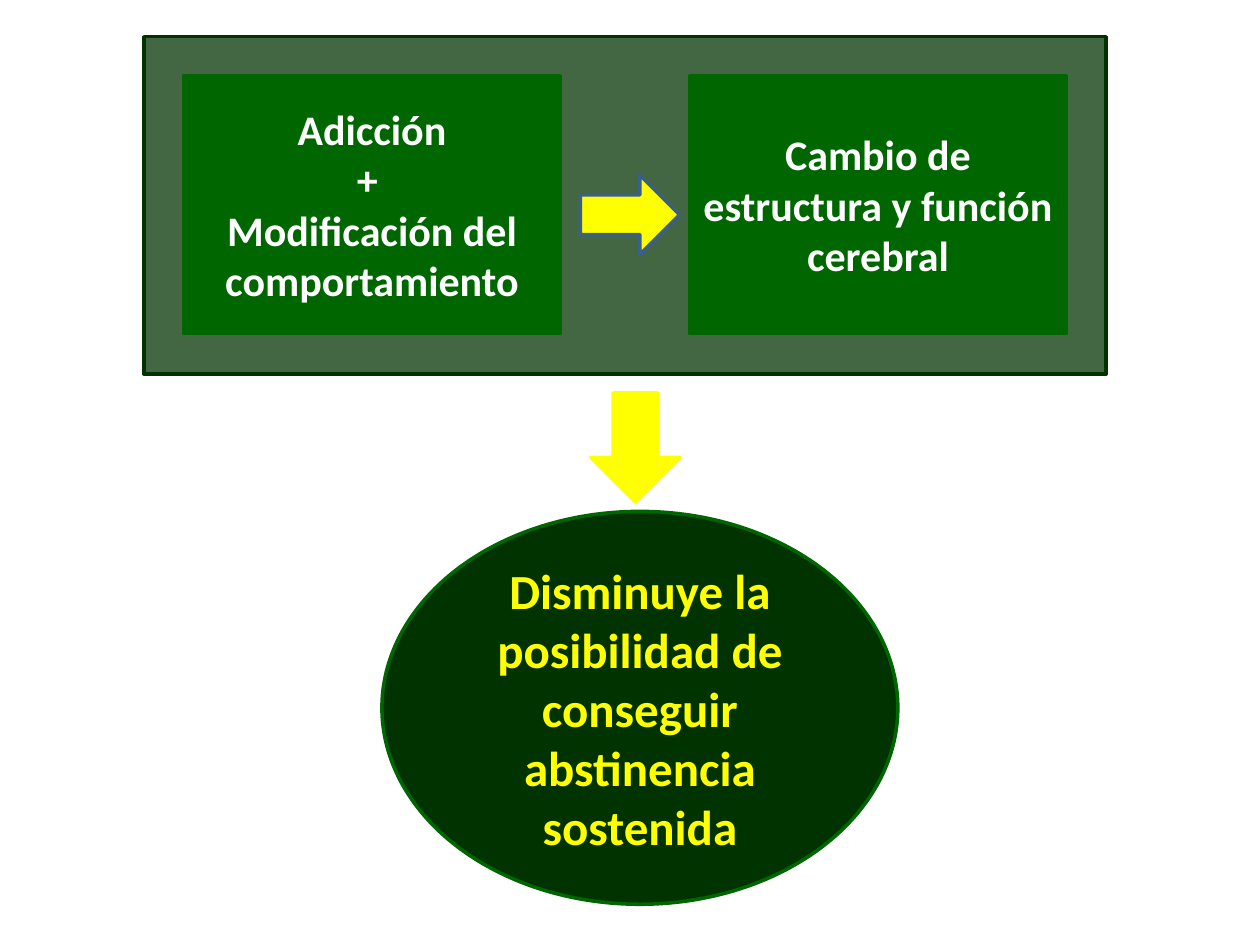
import dataclasses

import lxml.etree
import pptx
import pptx.dml.color
import pptx.enum.shapes
import pptx.enum.text
import pptx.oxml.ns
import pptx.util

Cm = pptx.util.Cm
Kind = pptx.enum.shapes.MSO_SHAPE


@dataclasses.dataclass(frozen=True)
class Theme:
    font: str = "Calibri"
    dark: str = "003300"
    green: str = "006600"
    yellow: str = "FFFF00"
    white: str = "FFFFFF"
    blue: str = "3A5F8C"
    body: int = 24
    large: int = 28
    line: int = 2


class Board:
    def __init__(self, slide, theme):
        self.slide = slide
        self.theme = theme

    def group(self):
        return self.slide.shapes.add_group_shape()

    def shape(self, group, kind, area, fill, line, alpha=None):
        shape = group.shapes.add_shape(kind, *map(Cm, area))
        shape.shadow.inherit = False
        shape.fill.solid()
        shape.fill.fore_color.rgb = pptx.dml.color.RGBColor.from_string(fill)
        shape.line.color.rgb = pptx.dml.color.RGBColor.from_string(line)
        shape.line.width = pptx.util.Pt(self.theme.line)
        if alpha is not None:
            qn = pptx.oxml.ns.qn
            color = shape.fill._xPr.find(qn("a:solidFill"))[0]
            lxml.etree.SubElement(color, qn("a:alpha")).set("val", str(alpha * 1000))
        return shape

    def text(self, shape, lines, size, color):
        frame = shape.text_frame
        frame.word_wrap = True
        frame.vertical_anchor = pptx.enum.text.MSO_ANCHOR.MIDDLE
        for i, line in enumerate(lines):
            para = frame.add_paragraph() if i else frame.paragraphs[0]
            para.alignment = pptx.enum.text.PP_ALIGN.CENTER
            run = para.add_run()
            run.text = line
            run.font.name = self.theme.font
            run.font.size = pptx.util.Pt(size)
            run.font.bold = True
            run.font.color.rgb = pptx.dml.color.RGBColor.from_string(color)


def main():
    deck = pptx.Presentation()
    deck.slide_width = Cm(25.4)
    deck.slide_height = Cm(19.05)
    theme = Theme()
    board = Board(deck.slides.add_slide(deck.slide_layouts[6]), theme)

    cause = board.group()
    board.shape(cause, Kind.RECTANGLE, (2.9, 0.74, 19.4, 6.8),
                theme.dark, theme.dark, alpha=74)
    boxes = (
        (3.7, ["Adicción", "+ ", "Modificación del comportamiento"]),
        (13.9, ["Cambio de estructura y función cerebral"]),
    )
    for left, lines in boxes:
        box = board.shape(cause, Kind.RECTANGLE, (left, 1.52, 7.6, 5.2),
                          theme.green, theme.green)
        board.text(box, lines, theme.body, theme.white)
    board.shape(cause, Kind.RIGHT_ARROW, (11.7, 3.53, 2, 1.6),
                theme.yellow, theme.blue)

    effect = board.group()
    board.shape(effect, Kind.DOWN_ARROW, (11.91, 7.92, 1.8, 2.2),
                theme.yellow, theme.yellow)
    oval = board.shape(effect, Kind.OVAL, (7.7, 10.31, 10.4, 7.92),
                       theme.dark, theme.green)
    board.text(oval, ["Disminuye la posibilidad de conseguir abstinencia sostenida"],
               theme.large, theme.yellow)

    deck.save("out.pptx")


if __name__ == "__main__":
    main()
